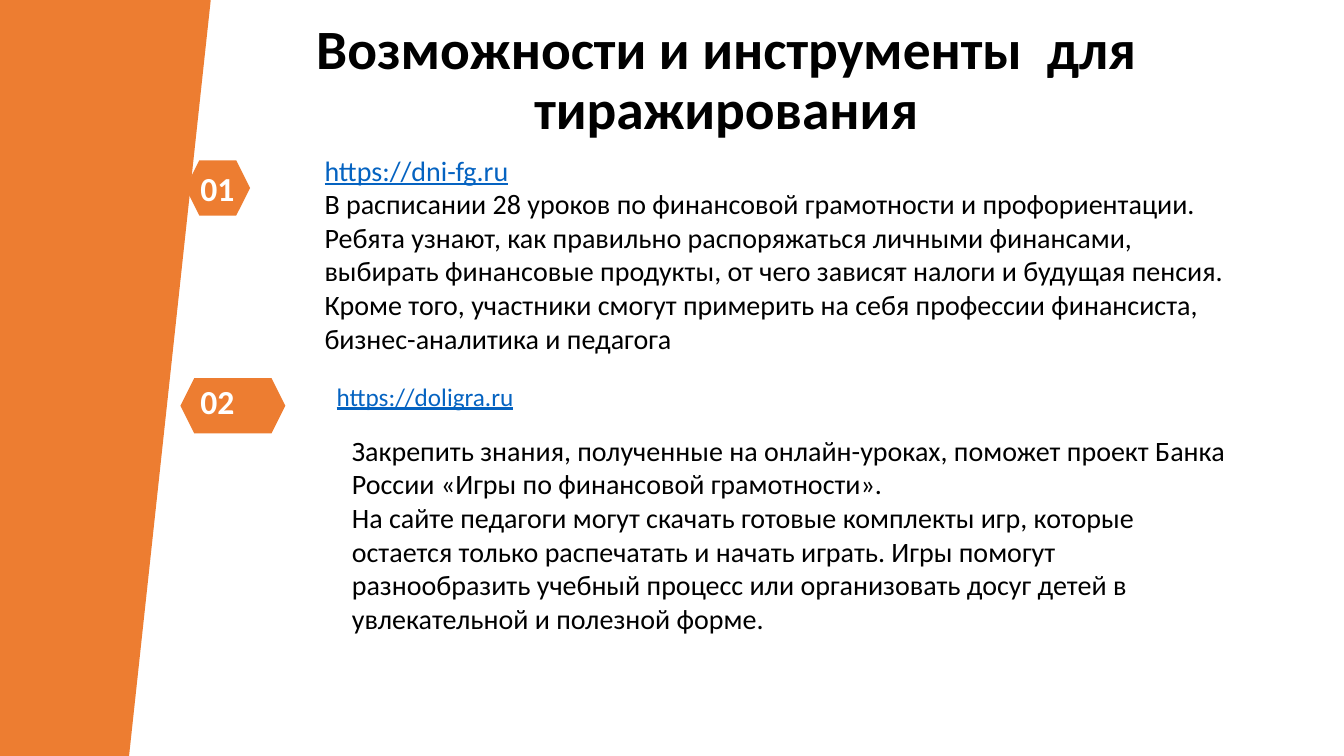
from pptx import Presentation
from pptx import util as u
from pptx.dml.color import RGBColor
from pptx.enum import shapes, text

FONT = "Calibri"
ORANGE, BLACK, WHITE, LINK = "ED7D31", "000000", "FFFFFF", "0563C1"

TITLE = "Возможности и инструменты  для тиражирования"
BAND = [(0, 0), (2.09, 0), (1.28, 7.5), (0, 7.5)]

# Number, hexagon box, label top
MARKERS = [
    ("01", (1.84, 1.59, 0.64, 0.55), 1.62),
    ("02", (1.79, 3.75, 1.04, 0.55), 3.73),
]
LABEL_LEFT, LABEL_SIZE = 1.89, (0.54, 0.5)

# Box, left margin, paragraphs as (text, size, is a web address)
TEXTS = [
    ((3.12, 1.47, 9.38, 2.46), 0.1, [
        ("https://dni-fg.ru", 20, True),
        ("В расписании 28 уроков по финансовой грамотности и профориентации. "
         "Ребята узнают, как правильно распоряжаться личными финансами, "
         "выбирать финансовые продукты, от чего зависят налоги и будущая пенсия. "
         "Кроме того, участники смогут примерить на себя профессии финансиста, "
         "бизнес-аналитика и педагога", 20, False),
    ]),
    ((3.24, 3.73, 9.13, 0.5), 0.1, [("https://doligra.ru", 18, True)]),
    ((3.34, 4.25, 9.03, 2.12), 0.15, [
        ("Закрепить знания, полученные на онлайн-уроках, поможет проект Банка "
         "России «Игры по финансовой грамотности».", 20, False),
        ("На сайте педагоги могут скачать готовые комплекты игр, которые "
         "остается только распечатать и начать играть. Игры помогут "
         "разнообразить учебный процесс или организовать досуг детей в "
         "увлекательной и полезной форме.", 20, False),
    ]),
]


def rgb(color):
    return RGBColor.from_string(color)


def inches(values):
    return [u.Inches(value) for value in values]


def paint(shape, color):
    shape.shadow.inherit = False
    shape.fill.solid()
    shape.fill.fore_color.rgb = rgb(color)
    shape.line.fill.background()


def style(paragraph, size, color, bold=False, underline=False):
    for run in paragraph.runs:
        font = run.font
        font.name, font.size = FONT, u.Pt(size)
        font.bold, font.underline = bold, underline
        font.color.rgb = rgb(color)


def add_title(slide):
    title = slide.shapes.title
    title.left, title.top, title.width, title.height = inches((1.4, 0.26, 11.61, 1.09))
    frame = title.text_frame
    frame.text = TITLE
    frame.word_wrap = True
    frame.auto_size = text.MSO_AUTO_SIZE.NONE
    frame.vertical_anchor = text.MSO_ANCHOR.MIDDLE
    heading = frame.paragraphs[0]
    heading.alignment = text.PP_ALIGN.CENTER
    heading.line_spacing = 0.9
    style(heading, 39.6, BLACK, bold=True)


def add_band(slide):
    points = [inches(point) for point in BAND]
    builder = slide.shapes.build_freeform(*points[0])
    builder.add_line_segments(points[1:], close=True)
    paint(builder.convert_to_shape(), ORANGE)


def add_marker(slide, number, box, label_top):
    hexagon = slide.shapes.add_shape(shapes.MSO_SHAPE.HEXAGON, *inches(box))
    paint(hexagon, ORANGE)
    label = slide.shapes.add_textbox(*inches((LABEL_LEFT, label_top, *LABEL_SIZE)))
    label.text_frame.word_wrap = False
    label.text_frame.text = number
    style(label.text_frame.paragraphs[0], 24, WHITE, bold=True)


def add_text(slide, box, margin, content):
    frame = slide.shapes.add_textbox(*inches(box)).text_frame
    frame.word_wrap = True
    frame.margin_left = u.Inches(margin)
    frame.text = "\n".join(line for line, _, _ in content)
    for paragraph, (_, size, is_address) in zip(frame.paragraphs, content):
        style(paragraph, size, LINK if is_address else BLACK, underline=is_address)


def main():
    deck = Presentation()
    deck.slide_width, deck.slide_height = inches((13.33, 7.5))
    slide = deck.slides.add_slide(deck.slide_layouts[5])
    add_title(slide)
    add_band(slide)
    for marker in MARKERS:
        add_marker(slide, *marker)
    for block in TEXTS:
        add_text(slide, *block)
    deck.save("out.pptx")


if __name__ == "__main__":
    main()
